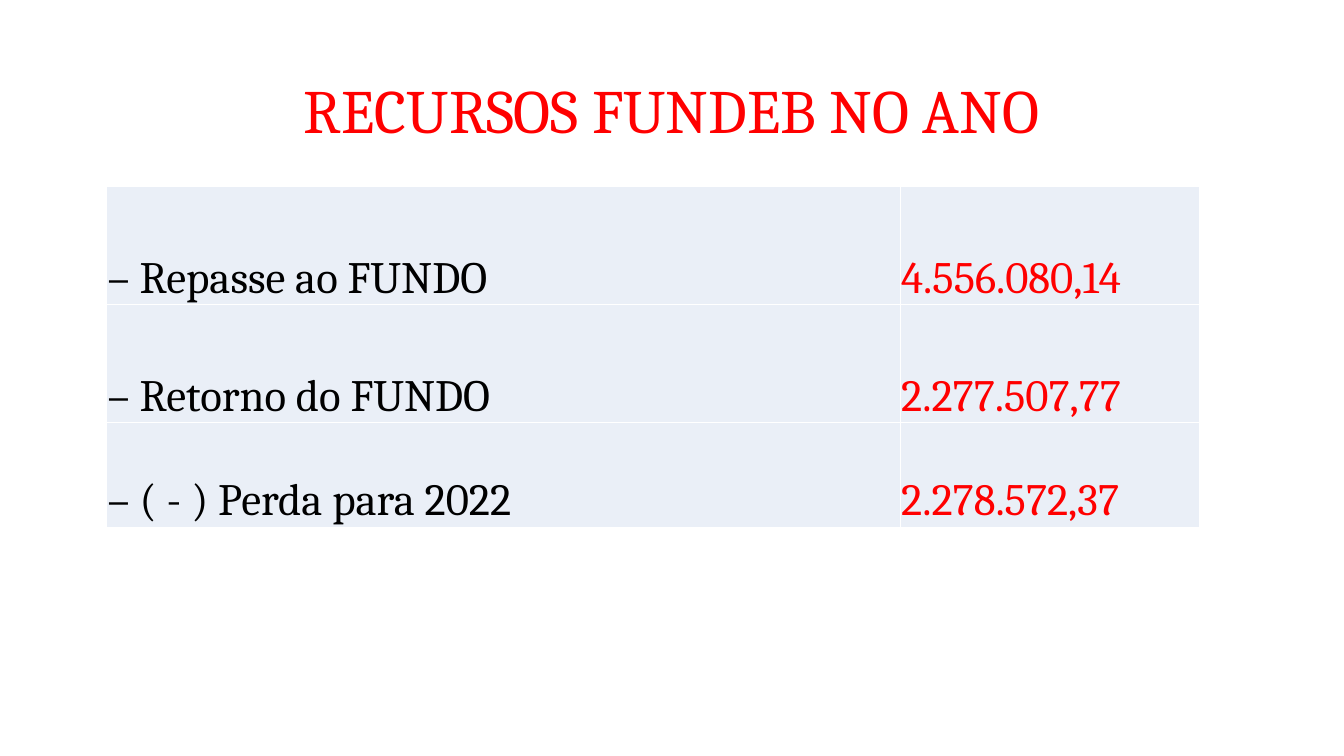
from dataclasses import dataclass

from pptx import Presentation
from pptx.dml.color import RGBColor
from pptx.enum.text import MSO_ANCHOR, PP_ALIGN
from pptx.util import Pt

MIDDLE, BOTTOM = MSO_ANCHOR.MIDDLE, MSO_ANCHOR.BOTTOM
CENTER, LEFT = PP_ALIGN.CENTER, PP_ALIGN.LEFT
TITLE_ONLY = 5


@dataclass(frozen=True)
class Theme:
    """Colours, font and type sizes of the slide."""
    font: str = "Cambria"
    accent: RGBColor = RGBColor(0xFF, 0x00, 0x00)
    text: RGBColor = RGBColor(0x00, 0x00, 0x00)
    cell: RGBColor = RGBColor(0xEA, 0xEF, 0xF7)
    title_size: int = 44
    body_size: int = 32


THEME = Theme()
FUNDEB_ROWS = [
    ("– Repasse ao FUNDO", "4.556.080,14"),
    ("– Retorno do FUNDO", "2.277.507,77"),
    ("– ( - ) Perda para 2022", "2.278.572,37"),
]


def write(tf, text, size, color, align):
    """Put one formatted line of text in a text frame."""
    tf.text = text
    p = tf.paragraphs[0]
    p.alignment = align
    font = p.runs[0].font
    font.name, font.size, font.color.rgb = THEME.font, Pt(size), color
    return p


def add_title(s, text, box):
    """Place the centred title in the given box."""
    sp = s.shapes.title
    sp.left, sp.top, sp.width, sp.height = map(Pt, box)
    tf = sp.text_frame
    p = write(tf, text, THEME.title_size, THEME.accent, CENTER)
    p.line_spacing = 0.9
    tf.vertical_anchor = MIDDLE
    tf.word_wrap = True


def add_amounts(s, rows, box, label_width, row_heights):
    """Place the table of labels and amounts in the given box."""
    table = s.shapes.add_table(len(rows), 2, *map(Pt, box)).table
    table.first_row = table.horz_banding = False
    table.columns[0].width = Pt(label_width)
    table.columns[1].width = Pt(box[2] - label_width)
    for i, (values, height) in enumerate(zip(rows, row_heights)):
        table.rows[i].height = Pt(height)
        for j, (value, color) in enumerate(zip(values, (THEME.text, THEME.accent))):
            cell = table.cell(i, j)
            cell.fill.solid()
            cell.fill.fore_color.rgb = THEME.cell
            cell.vertical_anchor = BOTTOM
            cell.margin_left = cell.margin_right = cell.margin_top = Pt(0.75)
            cell.margin_bottom = Pt(0)
            write(cell.text_frame, value, THEME.body_size, color, LEFT)


def main():
    """Build and save the slide."""
    prs = Presentation()
    prs.slide_width, prs.slide_height = Pt(960), Pt(540)
    s = prs.slides.add_slide(prs.slide_layouts[TITLE_ONLY])
    add_title(s, "RECURSOS FUNDEB NO ANO", (66, 28.75, 828, 104.4))
    add_amounts(s, FUNDEB_ROWS, (76, 133.2, 781, 243.4), 567, (84.3, 84.3, 74.8))
    prs.save("out.pptx")


if __name__ == "__main__":
    main()
